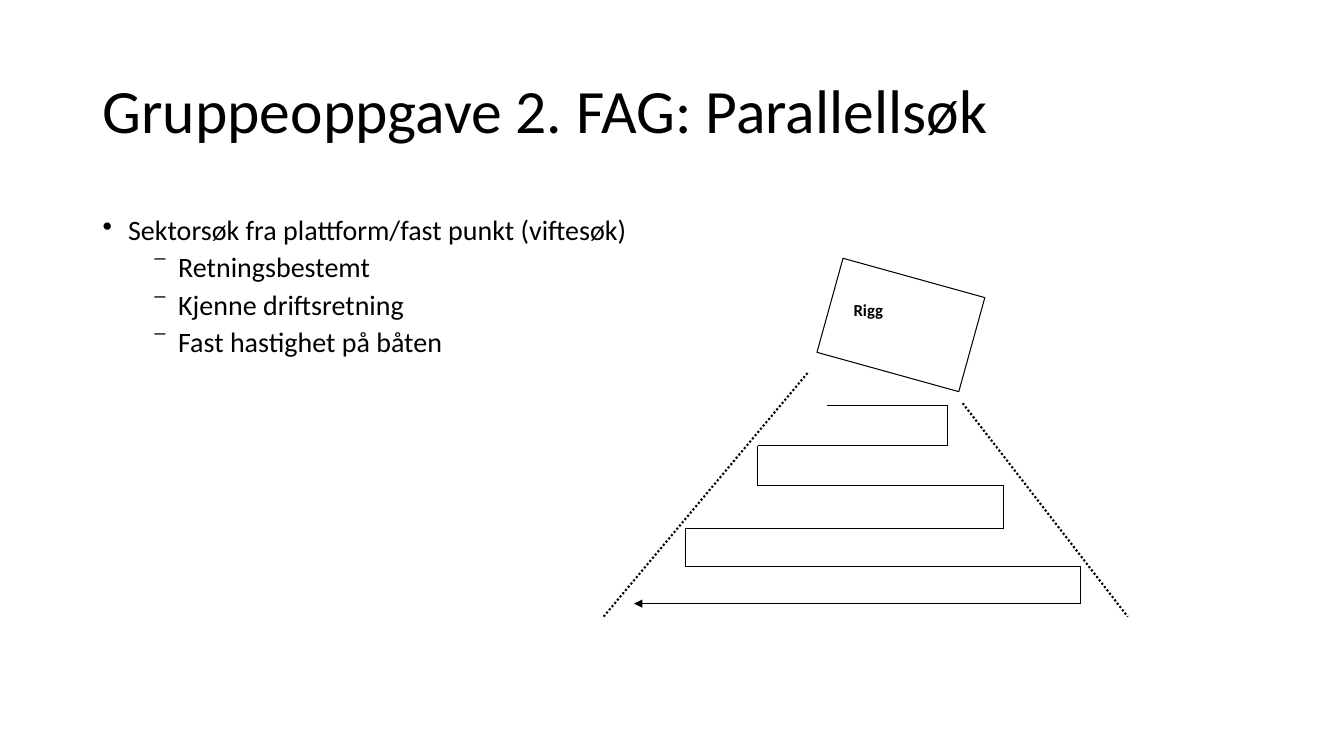
from itertools import pairwise

from lxml.etree import SubElement
from pptx import Presentation
from pptx.dml.color import RGBColor
from pptx.enum.dml import MSO_LINE_DASH_STYLE as Dash
from pptx.enum.shapes import MSO_CONNECTOR as Connector, MSO_SHAPE as Shape
from pptx.enum.text import MSO_ANCHOR as Anchor
from pptx.oxml.ns import qn
from pptx.util import Cm, Pt

COLOURS = {"ink": "000000", "paper": "FFFFFF"}


class SlideWriter:
    font = "Calibri"

    def __init__(self, page):
        self.page = page

    def colour(self, name):
        return RGBColor.from_string(COLOURS[name])

    def text_box(self, left, top, width, height, lines, size, bold=False,
                 anchor=Anchor.TOP):
        """Add a text box and return its paragraphs."""
        box = self.page.shapes.add_textbox(Cm(left), Cm(top), Cm(width), Cm(height))
        frame = box.text_frame
        frame.word_wrap = True
        frame.vertical_anchor = anchor
        frame.text = "\n".join(lines)
        for para in frame.paragraphs:
            for span in para.runs:
                span.font.name = self.font
                span.font.size = Pt(size)
                span.font.bold = bold
                span.font.color.rgb = self.colour("ink")
        return frame.paragraphs

    def title(self, text):
        para, = self.text_box(2.34, 1.02, 29.21, 3.68, [text], 44, anchor=Anchor.MIDDLE)
        para.line_spacing = 0.9

    def bullet_list(self, heading, points):
        paras = self.text_box(2.34, 5.33, 29.21, 12.75, [heading, *points], 20)
        for index, para in enumerate(paras):
            level, symbol, indent, space = (1, "⁻", 1.9, 5) if index else (0, "•", 0.64, 10)
            para.level = level
            para.line_spacing = 0.9
            para.space_before = Pt(space)
            props = para._p.get_or_add_pPr()
            props.set("marL", str(Cm(indent)))
            props.set("indent", str(-Cm(0.64)))
            SubElement(props, qn("a:buChar")).set("char", symbol)

    def rectangle(self, left, top, width, height, rotation):
        box = self.page.shapes.add_shape(
            Shape.RECTANGLE, Cm(left), Cm(top), Cm(width), Cm(height))
        box.rotation = rotation
        box.shadow.inherit = False
        box.fill.solid()
        box.fill.fore_color.rgb = self.colour("paper")
        box.line.color.rgb = self.colour("ink")
        box.line.width = Pt(0.75)

    def line(self, start, end, width=0.75, dash=None, arrow=False):
        line = self.page.shapes.add_connector(
            Connector.STRAIGHT, *map(Cm, start), *map(Cm, end))
        line.line.color.rgb = self.colour("ink")
        line.line.width = Pt(width)
        if dash:
            line.line.dash_style = dash
        if arrow:
            SubElement(line.line._get_or_add_ln(), qn("a:tailEnd")).set("type", "triangle")
        SubElement(line._element.spPr, qn("a:effectLst"))

    def search_track(self, turns, rows):
        """Sweep from one turn to the next, stepping down a row after each sweep."""
        points = [(turns[0], rows[0])]
        for x, (row, next_row) in zip(turns[1:], pairwise(rows)):
            points += [(x, row), (x, next_row)]
        points.append((turns[-1], rows[-1]))
        legs = list(pairwise(points))
        for number, (start, end) in enumerate(legs, 1):
            self.line(start, end, arrow=number == len(legs))


def main():
    deck = Presentation()
    deck.slide_width, deck.slide_height = Cm(33.87), Cm(19.05)
    writer = SlideWriter(deck.slides.add_slide(deck.slide_layouts[6]))

    writer.title("Gruppeoppgave 2. FAG: Parallellsøk")
    writer.bullet_list(
        "Sektorsøk fra plattform/fast punkt (viftesøk)",
        ["Retningsbestemt", "Kjenne driftsretning", "Fast hastighet på båten"])

    writer.rectangle(20.85, 6.96, 3.71, 2.46, rotation=15.5)
    writer.search_track(
        turns=[20.85, 23.88, 19.1, 25.3, 17.27, 27.23, 15.98],
        rows=[10.21, 11.23, 12.24, 13.31, 14.27, 15.21])
    for start, end in [((20.35, 9.4), (15.21, 15.54)), ((24.26, 10.16), (28.42, 15.54))]:
        writer.line(start, end, width=1.5, dash=Dash.ROUND_DOT)

    label, = writer.text_box(21.26, 7.42, 2.62, 1.6, ["Rigg"], 12, bold=True)
    label.space_after = Pt(10)
    deck.save("out.pptx")


if __name__ == "__main__":
    main()
